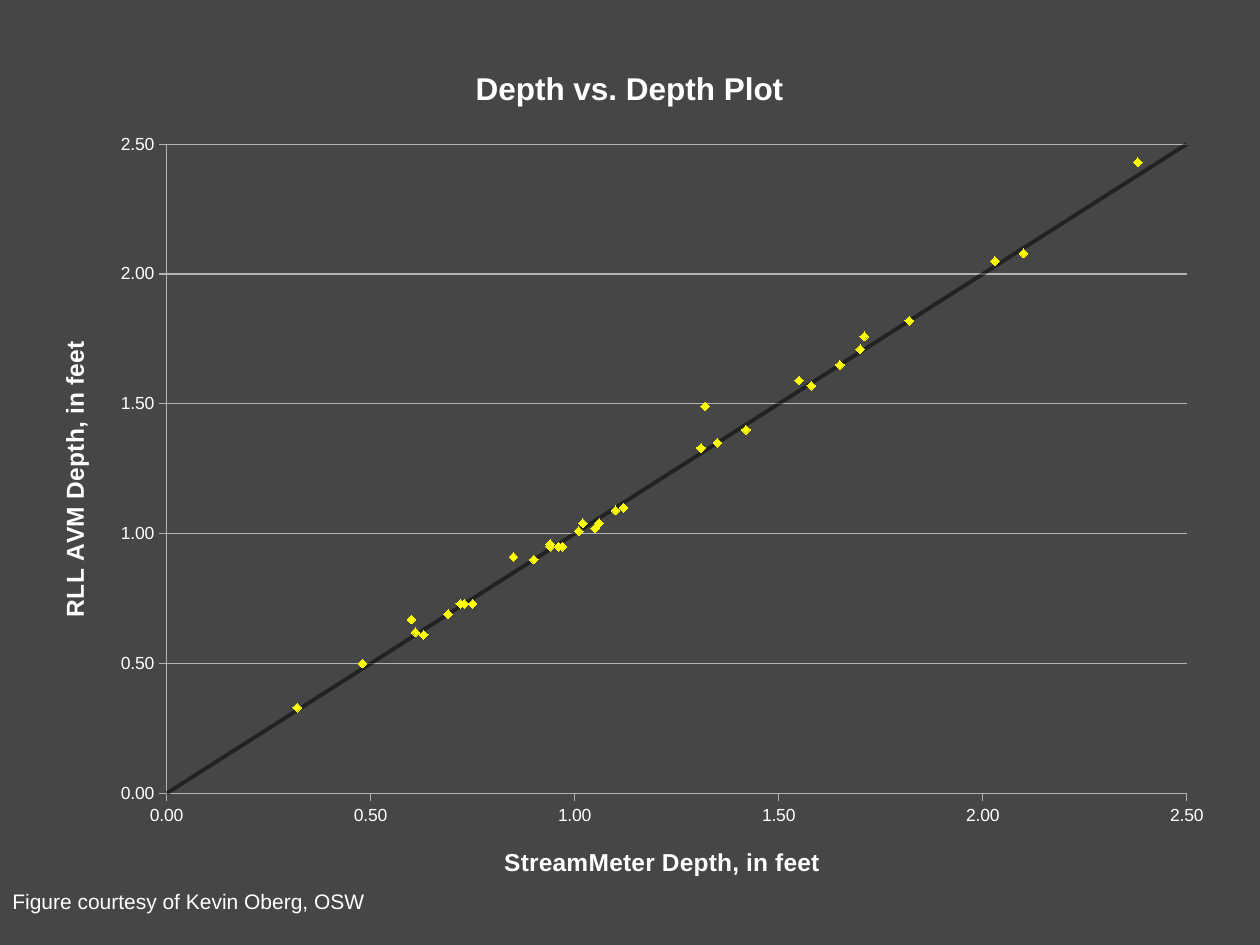
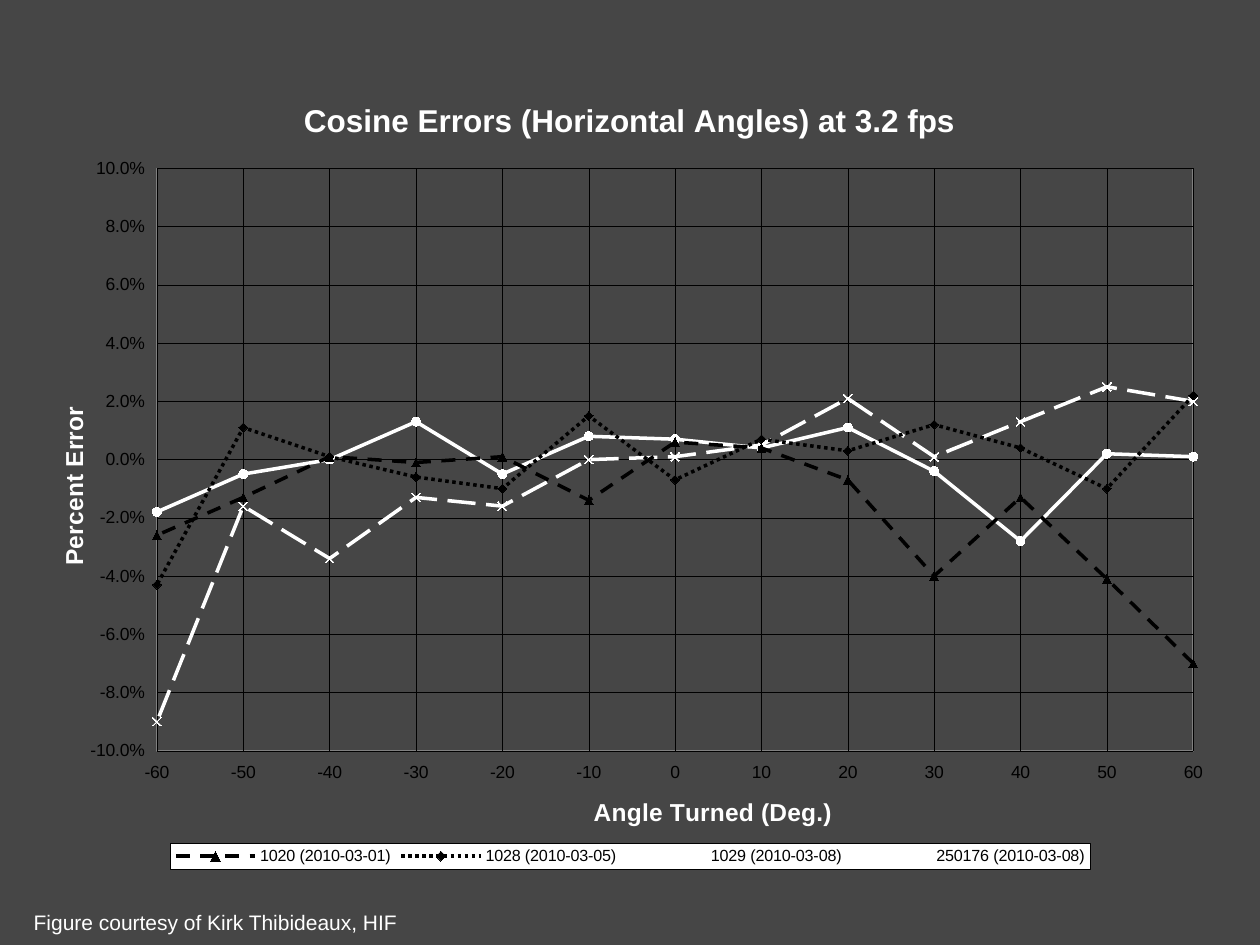
from lxml.etree import SubElement as Sub
from pptx import Presentation
from pptx.chart.data import XyChartData as XyData
from pptx.dml.color import RGBColor as Rgb
from pptx.enum.chart import XL_CHART_TYPE as Kind, XL_LEGEND_POSITION as Spot
from pptx.enum.chart import XL_MARKER_STYLE as Mark, XL_TICK_LABEL_POSITION as Label
from pptx.enum.chart import XL_TICK_MARK as Tick
from pptx.enum.dml import MSO_LINE as Dash
from pptx.oxml import parse_xml
from pptx.oxml.ns import nsdecls, qn
from pptx.util import Cm, Pt

FONT = "Arial"
HUES = {"back": "464646", "white": "FFFFFF", "black": "000000",
        "dot": "FFFF00", "grid": "B3B3B3", "edge": "808080"}

DEPTHS = [
    (0.32, 0.33), (1.7, 1.71), (1.58, 1.57), (1.01, 1.01), (1.72, None),
    (0.97, 0.95), (2.03, 2.05), (2.08, None), (0.9, 0.9), (1.02, 1.04),
    (0.96, 0.95), (1.65, 1.65), (0.48, 0.5), (1.1, 1.09), (1.06, 1.04),
    (1.35, 1.35), (1.32, 1.49), (2.1, 2.08), (0.94, 0.95), (0.75, 0.73),
    (0.63, 0.61), (1.05, 1.02), (1.42, 1.4), (0.73, 0.73), (1.12, 1.1),
    (2.38, 2.43), (0.6, 0.67), (0.61, 0.62), (0.72, 0.73), (1.31, 1.33),
    (0.69, 0.69), (1.71, 1.76), (0.94, 0.96), (1.55, 1.59), (0.85, 0.91),
    (1.82, 1.82)] + [(None, None)] * 7

ANGLES = range(60, -61, -10)
RUNS = [
    ("1020 (2010-03-01)", "black", Dash.DASH, Mark.TRIANGLE,
     [-0.07, -0.041, -0.013, -0.04, -0.007, 0.004, 0.006, -0.014, 0.001,
      -0.001, 0.001, -0.013, -0.026]),
    ("1028 (2010-03-05)", "black", Dash.ROUND_DOT, Mark.DIAMOND,
     [0.022, -0.01, 0.004, 0.012, 0.003, 0.007, -0.007, 0.015, -0.01,
      -0.006, 0.001, 0.011, -0.043]),
    ("1029 (2010-03-08)", "white", Dash.SOLID, Mark.CIRCLE,
     [0.001, 0.002, -0.028, -0.004, 0.011, 0.004, 0.007, 0.008, -0.005,
      0.013, 0, -0.005, -0.018]),
    ("250176 (2010-03-08)", "white", Dash.LONG_DASH, Mark.X,
     [0.02, 0.025, 0.013, 0.001, 0.021, 0.005, 0.001, 0, -0.016,
      -0.013, -0.034, -0.016, -0.09])]


def tint(hue):
    """Return the named colour."""
    return Rgb.from_string(HUES[hue])


def style(font, size, hue, bold=False):
    """Set face, size, colour and weight of a font."""
    font.name, font.size, font.bold = FONT, Pt(size), bold
    font.color.rgb = tint(hue)


def stroke(line, hue, width, dash=Dash.SOLID):
    """Set colour, width and dash of a line."""
    line.color.rgb = tint(hue)
    line.width, line.dash_style = Pt(width), dash


def place(part, index, **spot):
    """Pin a chart part at percentages of the chart."""
    old = part.find(qn("c:layout"))
    if old is not None:
        part.remove(old)
    layout = parse_xml(f"<c:layout {nsdecls('c')}/>")
    part.insert(index, layout)
    manual = Sub(layout, qn("c:manualLayout"))
    if index == 0:
        Sub(manual, qn("c:layoutTarget")).set("val", "inner")
    for side in "xy":
        Sub(manual, qn(f"c:{side}Mode")).set("val", "edge")
    for side, share in spot.items():
        Sub(manual, qn(f"c:{side}")).set("val", f"{share / 100:.4f}")


def panel(fill=None, edge=None, width=0.25):
    """Build the fill and outline of a chart part."""
    def paint(hue):
        if hue is None:
            return "<a:noFill/>"
        return f'<a:solidFill><a:srgbClr val="{HUES[hue]}"/></a:solidFill>'
    return parse_xml(f'<c:spPr {nsdecls("c", "a")}>{paint(fill)}'
                     f'<a:ln w="{Pt(width)}">{paint(edge)}</a:ln></c:spPr>')


def head(owner, text, size, x, y, turn=False):
    """Write and pin the title of a chart or an axis."""
    owner.has_title = True
    title = owner.chart_title if hasattr(owner, "chart_title") else owner.axis_title
    frame = title.text_frame
    frame.text = text
    style(frame.paragraphs[0].runs[0].font, size, "white", True)
    if turn:
        body = title._element.find(".//" + qn("a:bodyPr"))
        body.set("rot", "-5400000")
        body.set("vert", "horz")
    place(title._element, 1, x=x, y=y)


def scale(axis, low, high, step, form, hue, width, grid=True):
    """Set range, labels, line and grid of an axis."""
    axis.minimum_scale, axis.maximum_scale, axis.major_unit = low, high, step
    axis.tick_labels.number_format = form
    axis.tick_labels.number_format_is_linked = False
    stroke(axis.format.line, hue, width)
    axis.has_major_gridlines = grid
    if grid:
        stroke(axis.major_gridlines.format.line, hue, width)


def graph(slide, box, kind, rows, hue, plot, edge=None):
    """Add a scatter chart with a clear ground and a pinned plot."""
    data = XyData()
    for name, points in rows:
        row = data.add_series(name)
        for x, y in points:
            row.add_data_point(x, y)
    chart = slide.shapes.add_chart(kind, *map(Cm, box), data).chart
    style(chart.font, 10, hue)
    chart.has_legend = False
    chart.plots[0].vary_by_categories = False
    root = chart._chartSpace.find(qn("c:chart"))
    root.addnext(panel())
    for point in list(root.iter(qn("c:pt"))):
        if point.findtext(qn("c:v")) in ("None", "", None):
            point.getparent().remove(point)
    area = root.find(qn("c:plotArea"))
    place(area, 0, **plot)
    area.append(panel(edge=edge, width=1))
    for row in chart.plots[0].series:
        row.smooth = False
    return chart


def symbol(row, shape, hue):
    """Set the marker of a series."""
    row.marker.style, row.marker.size = shape, 5
    form = row.marker.format
    if shape == Mark.X:
        form.fill.background()
    else:
        form.fill.solid()
        form.fill.fore_color.rgb = tint(hue)
    form.line.color.rgb = tint(hue)


def credit(slide, box, text):
    """Add the credit line below a chart."""
    frame = slide.shapes.add_textbox(*map(Cm, box)).text_frame
    frame.word_wrap = True
    frame.text = text
    style(frame.paragraphs[0].runs[0].font, 12, "white")


def depth(slide, box):
    """Plot one depth reading against the other."""
    rows = [("Series 1", DEPTHS), ("Series 2", [(0, 0), (2.5, 2.5)])]
    chart = graph(slide, box, Kind.XY_SCATTER, rows, "white",
                  dict(x=11.2, y=12.1, w=85.42, h=74.8))
    head(chart, "Depth vs. Depth Plot", 18, 36.6, 2.6)
    across, up = chart.category_axis, chart.value_axis
    for axis, grid in ((across, False), (up, True)):
        scale(axis, 0, 2.5, 0.5, "0.00", "grid", 0.75, grid)
        axis.major_tick_mark = Tick.OUTSIDE
    head(across, "StreamMeter Depth, in feet", 14, 39.1, 92.5)
    head(up, "RLL AVM Depth, in feet", 14, 1.8, 34.3, True)
    dots, match = chart.plots[0].series
    dots.format.line.fill.background()
    symbol(dots, Mark.DIAMOND, "dot")
    match.marker.style = Mark.NONE
    stroke(match.format.line, "black", 2.25)
    shade = match._element.find(".//" + qn("a:srgbClr"))
    Sub(shade, qn("a:alpha")).set("val", "50000")


def cosine(slide, box):
    """Plot the error of each meter by angle."""
    rows = [(name, list(zip(ANGLES, errors))) for name, *_, errors in RUNS]
    chart = graph(slide, box, Kind.XY_SCATTER_LINES, rows, "black",
                  dict(x=9.95, y=12.05, w=87.6, h=72.7), "edge")
    head(chart, "Cosine Errors (Horizontal Angles) at 3.2 fps", 18, 21.9, 2.8)
    across, up = chart.category_axis, chart.value_axis
    scale(across, -60, 60, 10, "General", "black", 0.25)
    scale(up, -0.1, 0.1, 0.02, "0.0%", "black", 0.25)
    for axis in (across, up):
        axis.tick_label_position = Label.LOW
        axis.major_tick_mark = Tick.NONE
    head(across, "Angle Turned (Deg.)", 14, 46.5, 89.9)
    head(up, "Percent Error", 14, 1.2, 41.2, True)
    for row, (_, hue, dash, shape, _) in zip(chart.plots[0].series, RUNS):
        stroke(row.format.line, hue, 2, dash)
        symbol(row, shape, hue)
    legend(chart)


def legend(chart):
    """Add the white legend strip along the bottom."""
    chart.has_legend = True
    key = chart.legend
    key.position, key.include_in_layout = Spot.BOTTOM, False
    style(key.font, 9.2, "black")
    place(key._element, 1, x=11.1, y=96.75, w=77.7, h=3.5)
    key._element.find(qn("c:overlay")).addnext(panel("white", "black"))


def main():
    """Build and save the slides."""
    deck = Presentation()
    deck.slide_width, deck.slide_height = Cm(25.4), Cm(19.05)
    fill = deck.slide_master.background.fill
    fill.solid()
    fill.fore_color.rgb = tint("back")
    blank = deck.slide_layouts[6]
    slide = deck.slides.add_slide(blank)
    depth(slide, (0.66, 0.79, 24.08, 17.5))
    credit(slide, (0, 17.78, 10.16, 0.76), "Figure courtesy of Kevin Oberg, OSW")
    slide = deck.slides.add_slide(blank)
    cosine(slide, (0.79, 1.45, 23.85, 16.15))
    credit(slide, (0.43, 18.21, 11.86, 0.76),
           "Figure courtesy of Kirk Thibideaux, HIF")
    deck.save("out.pptx")


if __name__ == "__main__":
    main()
